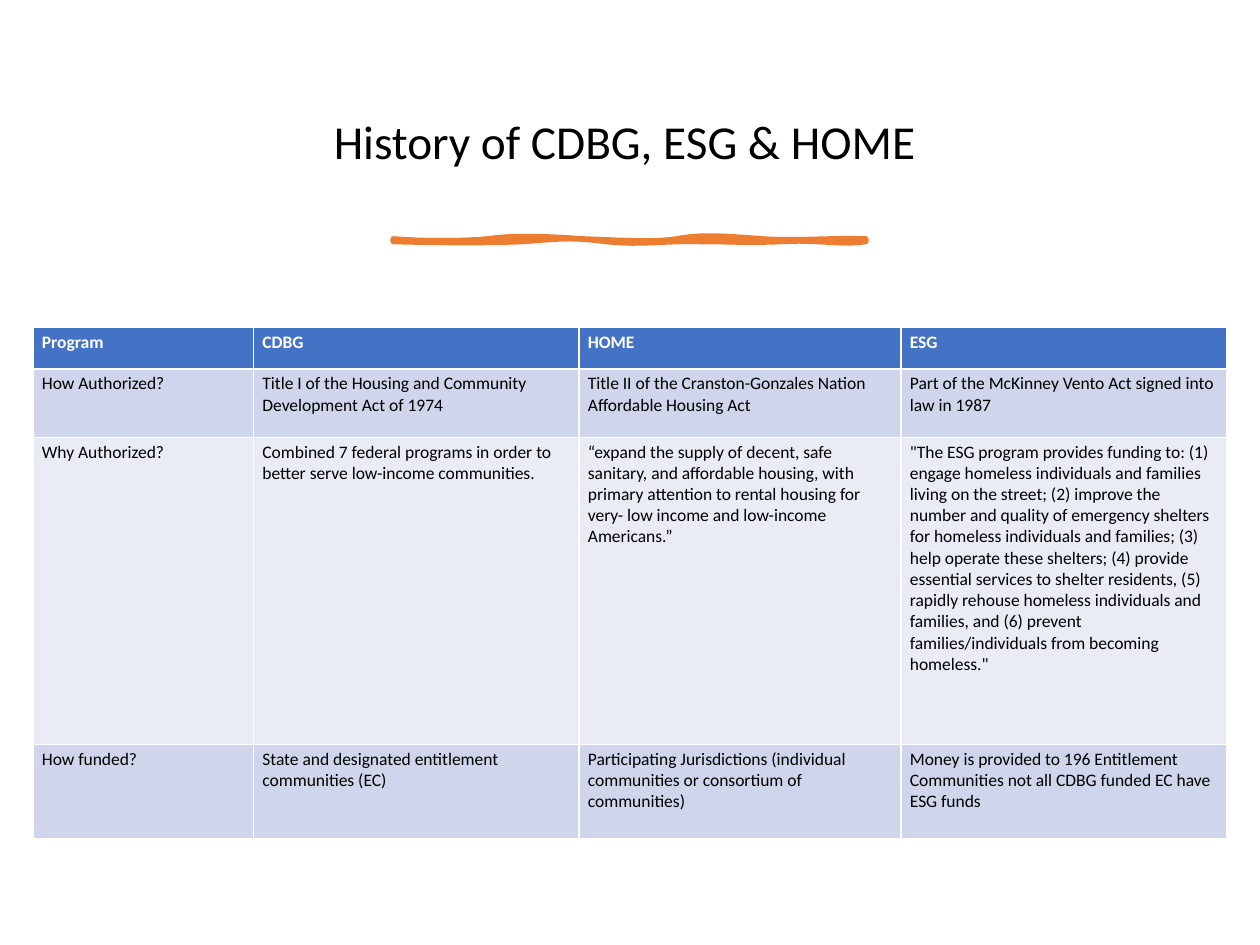
import pptx
import pptx.util
import pptx.dml.color
import pptx.enum.text
import lxml.etree
from dataclasses import dataclass

Pt = pptx.util.Pt
RGB = pptx.dml.color.RGBColor.from_string


@dataclass(frozen=True)
class Theme:
    font: str = "Calibri"
    title_size: float = 27
    table_size: float = 10
    text: str = "000000"
    header_text: str = "FFFFFF"
    header_fill: str = "4472C4"
    bands: tuple = ("CFD5EA", "E9EBF5")
    accent: str = "ED7D31"


THEME = Theme()

TITLE = "History of CDBG, ESG & HOME"
COLUMN_WIDTHS = (126, 186, 184, 186)
ROW_HEIGHTS = (23.8, 38.9, 175.7, 54)
ROWS = (
    ("Program", "CDBG", "HOME", "ESG"),
    ("How Authorized?",
     "Title I of the Housing and Community Development Act of 1974",
     "Title II of the Cranston-Gonzales Nation Affordable Housing Act",
     "Part of the McKinney Vento Act signed into law in 1987"),
    ("Why Authorized?",
     "Combined 7 federal programs in order to better serve low-income communities.",
     "“expand the supply of decent, safe sanitary, and affordable housing, with primary "
     "attention to rental housing for very- low income and low-income Americans.”",
     '"The ESG program provides funding to: (1) engage homeless individuals and families '
     "living on the street; (2) improve the number and quality of emergency shelters for "
     "homeless individuals and families; (3) help operate these shelters; (4) provide "
     "essential services to shelter residents, (5) rapidly rehouse homeless individuals "
     'and families, and (6) prevent families/individuals from becoming homeless."'),
    ("How funded?",
     "State and designated entitlement communities (EC)",
     "Participating Jurisdictions (individual communities or consortium of communities)",
     "Money is provided to 196 Entitlement Communities not all CDBG funded EC have ESG funds"),
)

# Brush edges: a start point, then three Bezier points per curve
BRUSH_WIDTH = 270
BRUSH_TOP = ((0, 0), (17.3, 1.4), (38.9, 1.4), (54, 0), (69.1, -2.2), (88.6, -1.4),
             (108, 0), (128.2, 0.7), (148.3, 2.2), (162, 0), (176.4, -2.9),
             (191.5, -1.4), (211, 0), (229.7, 1.4), (252.7, -0.7), (270, 0))
BRUSH_BOTTOM = ((270, 1.4), (254.2, 3.6), (243.4, 0), (221.8, 1.4), (200.2, 2.2),
                (195.8, 1.4), (175.7, 1.4), (155.5, 0.7), (142.6, 3.6), (121.7, 1.4),
                (100.8, -1.4), (93.6, 0), (73.4, 1.4), (53.3, 2.2), (32.4, 2.2), (0, 1.4))


def format_runs(p, size, color, bold=False):
    for r in p.runs:
        r.font.name = THEME.font
        r.font.size = Pt(size)
        r.font.bold = bold
        r.font.color.rgb = RGB(color)


def add_title(slide, left, top, width, height):
    sp = slide.shapes.title
    sp.left, sp.top, sp.width, sp.height = Pt(left), Pt(top), Pt(width), Pt(height)
    tf = sp.text_frame
    tf.text = TITLE
    tf.word_wrap = True
    tf.vertical_anchor = pptx.enum.text.MSO_ANCHOR.MIDDLE
    tf.margin_right = Pt(13)  # optical shift to the left
    p = tf.paragraphs[0]
    p.alignment = pptx.enum.text.PP_ALIGN.CENTER
    p.line_spacing = 0.9
    format_runs(p, THEME.title_size, THEME.text)


def sample_curves(points, steps=12):
    """Return points along a chain of cubic Bezier curves."""
    samples = [points[0]]
    for i in range(0, len(points) - 1, 3):
        for step in range(1, steps + 1):
            t = step / steps
            weights = ((1 - t) ** 3, 3 * t * (1 - t) ** 2, 3 * t * t * (1 - t), t ** 3)
            samples.append(tuple(sum(w * pt[axis] for w, pt in zip(weights, points[i:i + 4]))
                                 for axis in (0, 1)))
    return samples


def add_brush_line(slide, left, top, width):
    scale = width / BRUSH_WIDTH
    outline = [(Pt(left + x * scale), Pt(top + y))
               for x, y in sample_curves(BRUSH_TOP) + sample_curves(BRUSH_BOTTOM)]
    builder = slide.shapes.build_freeform(*outline[0])
    builder.add_line_segments(outline[1:], close=True)
    sp = builder.convert_to_shape()
    sp.shadow.inherit = False
    sp.fill.solid()
    sp.fill.fore_color.rgb = RGB(THEME.accent)
    sp.line.color.rgb = RGB(THEME.accent)
    sp.line.width = Pt(3.25)
    # Rounded corners on the stroke
    ln = sp.line.fill._xPr
    lxml.etree.SubElement(ln, pptx.oxml.ns.qn("a:round"))


def add_program_table(slide, left, top, width, height):
    table = slide.shapes.add_table(len(ROWS), len(COLUMN_WIDTHS), Pt(left), Pt(top),
                                   Pt(width), Pt(height)).table
    for column, share in zip(table.columns, COLUMN_WIDTHS):
        column.width = Pt(width * share / sum(COLUMN_WIDTHS))
    for row, share in zip(table.rows, ROW_HEIGHTS):
        row.height = Pt(height * share / sum(ROW_HEIGHTS))
    for i, texts in enumerate(ROWS):
        header = i == 0
        fill = THEME.header_fill if header else THEME.bands[(i - 1) % 2]
        color = THEME.header_text if header else THEME.text
        for j, text in enumerate(texts):
            cell = table.cell(i, j)
            cell.margin_left = cell.margin_right = Pt(5)
            cell.margin_top = cell.margin_bottom = Pt(2.4)
            cell.fill.solid()
            cell.fill.fore_color.rgb = RGB(fill)
            cell.text_frame.text = text
            format_runs(cell.text_frame.paragraphs[0], THEME.table_size, color, header)


def main():
    prs = pptx.Presentation()
    prs.slide_width, prs.slide_height = Pt(720), Pt(540)
    slide = prs.slides.add_slide(prs.slide_layouts[5])  # Title Only
    add_title(slide, 37.5, 33, 644.5, 98.5)
    add_brush_line(slide, 224.7, 136.6, 270)
    add_program_table(slide, 19, 187.2, 682, 292.4)
    prs.save("out.pptx")


if __name__ == "__main__":
    main()
